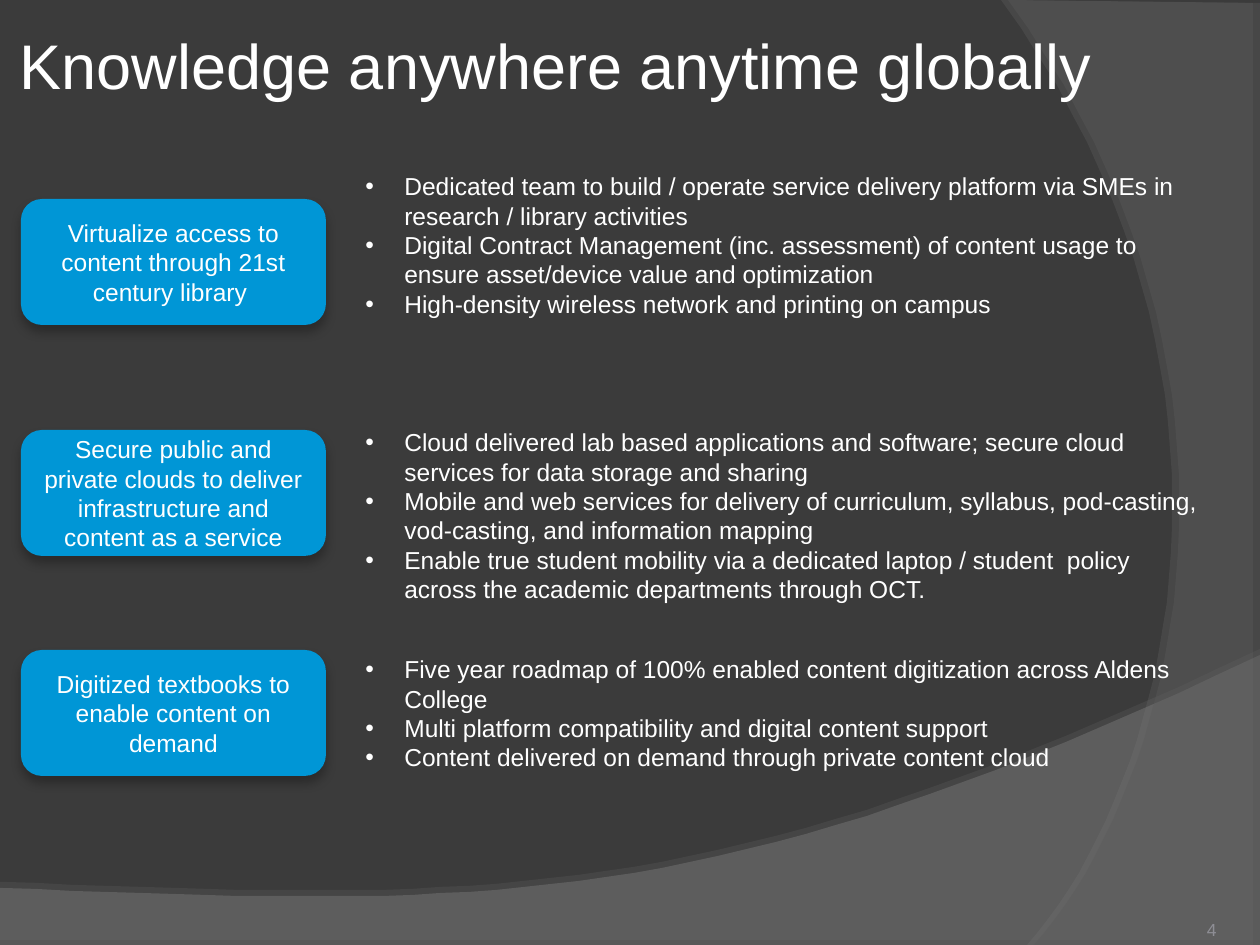
from lxml import etree
from pptx import Presentation
from pptx.dml.color import RGBColor
from pptx.enum.shapes import MSO_SHAPE
from pptx.enum.text import MSO_ANCHOR, PP_ALIGN
from pptx.oxml.ns import qn
from pptx.util import Pt

SCALE = 914400 / 126  # EMU per px
FONT = "Arial"
COLORS = {
    "background": "3B3B3B",
    "lower_wave": "7C7C7C",
    "right_wave": "595959",
    "wave_shadow": "808080",
    "topic": "0096D6",
    "topic_shadow": "000000",
    "text": "FFFFFF",
    "page_number": "8E8E95",
}

# Topic label, top of its box, top and height of its list, list entries
TOPICS = [
    ("Virtualize access to content through 21st century library ", 199, 165, 190, [
        "Dedicated team to build / operate service delivery platform via SMEs in "
        "research / library activities",
        "Digital Contract Management (inc. assessment) of content usage to ensure "
        "asset/device value and optimization",
        "High-density wireless network and printing on campus",
    ]),
    ("Secure public and private clouds to deliver infrastructure and content as a service",
     430, 421, 220, [
        "Cloud delivered lab based applications and software; secure cloud services "
        "for data storage and sharing",
        "Mobile and web services for delivery of curriculum, syllabus, pod-casting, "
        "vod-casting, and information mapping",
        "Enable true student mobility via a dedicated laptop / student  policy across "
        "the academic departments through OCT.",
    ]),
    ("Digitized textbooks to enable content on demand", 650, 648, 131, [
        "Five year roadmap of 100% enabled content digitization across Aldens College",
        "Multi platform compatibility and digital content support",
        "Content delivered on demand through private content cloud",
    ]),
]


def px(length):
    return round(length * SCALE)


def rgb(name):
    return RGBColor.from_string(COLORS[name])


def add_alpha(color_element, percent):
    etree.SubElement(color_element, qn("a:alpha"), val=str(percent * 1000))


def add_shadow(shape, color, opacity, blur, distance, angle):
    shape.shadow.inherit = False
    effects = shape._element.spPr.find(qn("a:effectLst"))
    shadow = etree.SubElement(
        effects, qn("a:outerShdw"), blurRad=str(Pt(blur)), dist=str(Pt(distance)),
        dir=str(angle * 60000), algn="ctr", rotWithShape="0")
    add_alpha(etree.SubElement(shadow, qn("a:srgbClr"), val=COLORS[color]), opacity)


def add_run(paragraph, text, size, color="text"):
    run = paragraph.add_run()
    run.text = text
    run.font.name = FONT
    run.font.size = Pt(size)
    run.font.color.rgb = rgb(color)


def add_text_frame(slide, left, top, width, height, anchor=MSO_ANCHOR.TOP):
    frame = slide.shapes.add_textbox(px(left), px(top), px(width), px(height)).text_frame
    frame.word_wrap = True
    frame.vertical_anchor = anchor
    return frame


def bezier(start, control_1, control_2, end, steps=40):
    points = []
    for step in range(1, steps + 1):
        t = step / steps
        weights = ((1 - t) ** 3, 3 * t * (1 - t) ** 2, 3 * t * t * (1 - t), t ** 3)
        points.append(tuple(
            sum(w * value for w, value in zip(weights, axis))
            for axis in zip(start, control_1, control_2, end)))
    return points


def add_wave(slide, corners, curve, color, opacity, shadow):
    """Straight corners, closed by a curve that starts at the last corner."""
    outline = slide.shapes.build_freeform(*corners[0], scale=SCALE)
    outline.add_line_segments(corners[1:] + bezier(corners[-1], *curve), close=True)
    wave = outline.convert_to_shape()
    wave.fill.solid()
    wave.fill.fore_color.rgb = rgb(color)
    add_alpha(wave._element.spPr.find(qn("a:solidFill"))[0], opacity)
    wave.line.fill.background()
    add_shadow(wave, "wave_shadow", *shadow)


def add_title(slide, text):
    frame = add_text_frame(slide, 14, 11, 1183, 116, MSO_ANCHOR.MIDDLE)
    frame.margin_left = frame.margin_right = px(6)
    frame.margin_top = frame.margin_bottom = px(6)
    frame.paragraphs[0].line_spacing = 0.9
    add_run(frame.paragraphs[0], text, 36)


def add_topic(slide, label, top):
    topic = slide.shapes.add_shape(
        MSO_SHAPE.ROUNDED_RECTANGLE, px(21), px(top), px(305), px(126))
    topic.fill.solid()
    topic.fill.fore_color.rgb = rgb("topic")
    topic.line.fill.background()
    add_shadow(topic, "topic_shadow", 27, 6, 4, 90)
    frame = topic.text_frame
    frame.word_wrap = True
    frame.vertical_anchor = MSO_ANCHOR.MIDDLE
    frame.paragraphs[0].alignment = PP_ALIGN.CENTER
    add_run(frame.paragraphs[0], label, 14)


def add_bullet_list(slide, top, height, entries):
    frame = add_text_frame(slide, 353, top, 868, height)
    for index, entry in enumerate(entries):
        paragraph = frame.add_paragraph() if index else frame.paragraphs[0]
        properties = paragraph._p.get_or_add_pPr()
        properties.set("marL", str(px(39)))
        properties.set("indent", str(-px(39)))
        etree.SubElement(properties, qn("a:buFont"), typeface=FONT)
        etree.SubElement(properties, qn("a:buChar"), char="•")
        add_run(paragraph, entry, 14)


def add_page_number(slide, number):
    frame = add_text_frame(slide, 1184, 913, 45, 33, MSO_ANCHOR.BOTTOM)
    frame.word_wrap = False
    frame.paragraphs[0].alignment = PP_ALIGN.RIGHT
    add_run(frame.paragraphs[0], number, 10, "page_number")


def main():
    deck = Presentation()
    deck.slide_width, deck.slide_height = px(1260), px(945)
    slide = deck.slides.add_slide(deck.slide_layouts[6])
    slide.background.fill.solid()
    slide.background.fill.fore_color.rgb = rgb("background")

    # Background waves
    add_wave(slide, [(0, 888), (0, 946), (1260, 946), (1260, 655)],
             [(704, 919), (493, 906), (0, 888)], "lower_wave", 45, (35, 0, 3.5, 270))
    add_wave(slide, [(1260, 3), (1260, 945), (1034, 945)],
             [(1178, 780), (1283, 378), (1008, 0)], "right_wave", 40, (45, 0, 4, 180))

    # Title and page number
    add_title(slide, "Knowledge anywhere anytime globally")
    add_page_number(slide, "4")

    # Topics with their lists
    for label, topic_top, list_top, list_height, entries in TOPICS:
        add_topic(slide, label, topic_top)
        add_bullet_list(slide, list_top, list_height, entries)

    deck.save("out.pptx")


if __name__ == "__main__":
    main()
